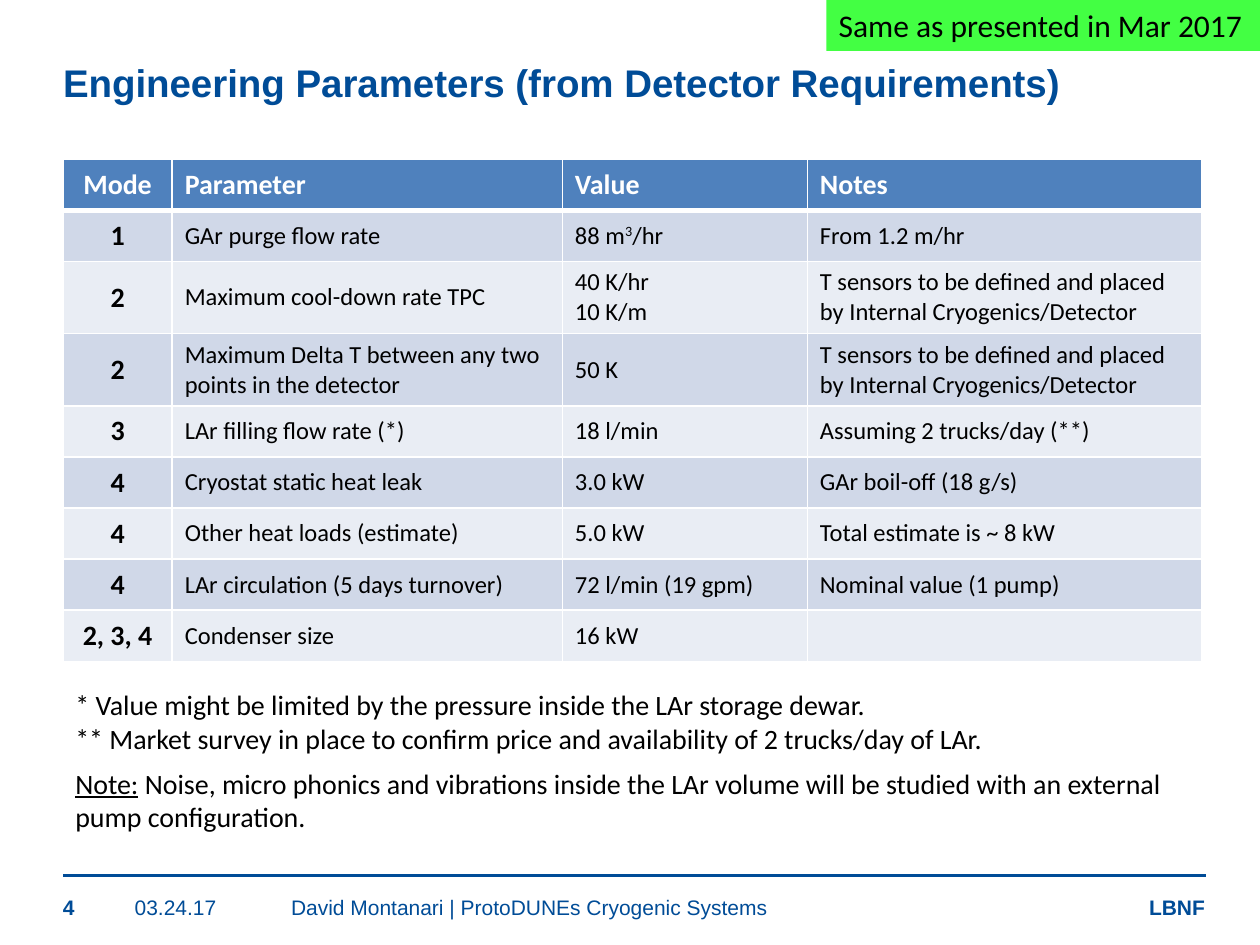
"""Build the ProtoDUNE engineering parameters slide."""
from dataclasses import dataclass
from typing import Any, Optional

from lxml.etree import SubElement
from pptx import Presentation
from pptx.dml.color import RGBColor
from pptx.enum.shapes import MSO_CONNECTOR, MSO_SHAPE
from pptx.enum.text import MSO_ANCHOR, MSO_AUTO_SIZE, PP_ALIGN
from pptx.oxml.ns import qn
from pptx.util import Pt

NAVY = RGBColor(0x00, 0x4C, 0x97)
BLUE = RGBColor(0x4F, 0x81, 0xBD)
BAND_DARK = RGBColor(0xD0, 0xD8, 0xE8)
BAND_LIGHT = RGBColor(0xE9, 0xED, 0xF4)
GREEN = RGBColor(0x43, 0xFF, 0x43)
WHITE = RGBColor(0xFF, 0xFF, 0xFF)
BLACK = RGBColor(0x00, 0x00, 0x00)

TITLE = {"name": "Arial", "size": Pt(22), "bold": True, "color": NAVY}
FOOTER = {"name": "Arial", "size": Pt(12), "bold": False, "color": NAVY}
FOOTER_BOLD = {**FOOTER, "bold": True}
HEADER = {"name": "Calibri", "size": Pt(16), "bold": True, "color": WHITE}
MODE = {**HEADER, "color": BLACK}
BODY = {**MODE, "size": Pt(14), "bold": False}
NOTE = {**BODY, "size": Pt(16)}
BADGE = {**BODY, "size": Pt(18)}
SUPERSCRIPT = {**BODY, "baseline": "30000"}
UNDERLINED = {**NOTE, "underline": True}

Line = list[tuple[str, dict[str, Any]]]


@dataclass
class TextBox:
    left: float
    top: float
    width: float
    height: float
    lines: list[Line]
    inset: Optional[float] = None
    wrap: bool = True


FOOTER_TOP, FOOTER_HEIGHT = 511.2, 14.4
TEXT_BOXES = [
    TextBox(656.6, 510.5, 33.2, 15.1, [[("LBNF", FOOTER_BOLD)]], 0, False),
    TextBox(77, FOOTER_TOP, 89.3, FOOTER_HEIGHT, [[("03.24.17", FOOTER)]], 0),
    TextBox(166.3, FOOTER_TOP, 442, FOOTER_HEIGHT,
            [[("David Montanari | ProtoDUNEs Cryogenic Systems", FOOTER)]], 0),
    TextBox(36, FOOTER_TOP, 41, FOOTER_HEIGHT, [[("4", FOOTER_BOLD)]], 0),
    TextBox(36, 434.2, 648, 46, [[
        ("Note:", UNDERLINED),
        (" Noise, micro phonics and vibrations inside the LAr volume will be "
         "studied with an external pump configuration.", NOTE)]]),
    TextBox(36, 389.5, 535.7, 46, [
        [("* Value might be limited by the pressure inside the LAr storage dewar.", NOTE)],
        [("** Market survey in place to confirm price and availability of "
          "2 trucks/day of LAr.", NOTE)]], wrap=False),
]

SENSORS = "T sensors to be defined and placed by Internal Cryogenics/Detector"
COLUMN_WIDTHS = [62.4, 223, 140, 225.3]
ROW_HEIGHT = 29.2
ROWS = [
    ["Mode", "Parameter", "Value", "Notes"],
    ["1", "GAr purge flow rate", "88 m^3^/hr", "From 1.2 m/hr"],
    ["2", "Maximum cool-down rate TPC", "40 K/hr\n10 K/m", SENSORS],
    ["2", "Maximum Delta T between any two points in the detector", "50 K", SENSORS],
    ["3", "LAr filling flow rate (*)", "18 l/min", "Assuming 2 trucks/day (**)"],
    ["4", "Cryostat static heat leak", "3.0 kW", "GAr boil-off (18 g/s)"],
    ["4", "Other heat loads (estimate)", "5.0 kW", "Total estimate is ~ 8 kW"],
    ["4", "LAr circulation (5 days turnover)", "72 l/min (19 gpm)", "Nominal value (1 pump)"],
    ["2, 3, 4", "Condenser size", "16 kW", ""],
]


def write_lines(frame: Any, lines: list[Line], align: PP_ALIGN = PP_ALIGN.LEFT) -> None:
    """Write formatted lines as the paragraphs of a text frame."""
    for index, line in enumerate(lines):
        para = frame.add_paragraph() if index else frame.paragraphs[0]
        para.alignment = align
        for text, style in line:
            span = para.add_run()
            span.text = text
            for key, value in style.items():
                if key == "color":
                    span.font.color.rgb = value
                elif key == "baseline":
                    span._r.get_or_add_rPr().set(key, value)
                else:
                    setattr(span.font, key, value)


def set_insets(frame: Any, inset: float) -> None:
    """Give a text frame the same inset on all sides."""
    for side in ("left", "top", "right", "bottom"):
        setattr(frame, f"margin_{side}", Pt(inset))


def add_text_box(page: Any, item: TextBox) -> None:
    """Add a text box to the page."""
    box = page.shapes.add_textbox(Pt(item.left), Pt(item.top), Pt(item.width), Pt(item.height))
    frame = box.text_frame
    frame.word_wrap = item.wrap
    if item.inset is not None:
        set_insets(frame, item.inset)
        frame.vertical_anchor = MSO_ANCHOR.BOTTOM
    write_lines(frame, item.lines)


def set_borders(cell: Any, widths: dict[str, float]) -> None:
    """Draw white borders of the given widths around a cell."""
    properties = cell._tc.get_or_add_tcPr()
    for side, width in widths.items():
        border = SubElement(properties, qn(f"a:ln{side}"), w=str(Pt(width)))
        SubElement(SubElement(border, qn("a:solidFill")), qn("a:srgbClr"), val=str(WHITE))


def split_cell(text: str, style: dict[str, Any]) -> list[Line]:
    """Split cell text into lines, with superscripts between carets."""
    return [[(part, SUPERSCRIPT if index % 2 else style)
             for index, part in enumerate(line.split("^"))]
            for line in text.split("\n")]


def add_parameter_table(page: Any) -> None:
    """Add the banded table of parameters."""
    table = page.shapes.add_table(
        len(ROWS), len(COLUMN_WIDTHS), Pt(36), Pt(90.9),
        Pt(sum(COLUMN_WIDTHS)), Pt(ROW_HEIGHT * len(ROWS))).table
    for column, width in zip(table.columns, COLUMN_WIDTHS):
        column.width = Pt(width)
    for row_index, texts in enumerate(ROWS):
        table.rows[row_index].height = Pt(ROW_HEIGHT)
        band = BAND_DARK if row_index % 2 else BAND_LIGHT
        for column_index, text in enumerate(texts):
            cell = table.cell(row_index, column_index)
            set_borders(cell, {"L": 1, "R": 1, "T": 3 if row_index == 1 else 1,
                               "B": 1 if row_index else 3})
            cell.fill.solid()
            cell.fill.fore_color.rgb = band if row_index else BLUE
            cell.vertical_anchor = MSO_ANCHOR.MIDDLE
            if text:
                style = HEADER if row_index == 0 else BODY if column_index else MODE
                align = PP_ALIGN.LEFT if column_index else PP_ALIGN.CENTER
                write_lines(cell.text_frame, split_cell(text, style), align)


def add_title(page: Any) -> None:
    """Place and format the title."""
    title = page.shapes.title
    place = {"left": 36, "top": 33.8, "width": 676, "height": 44.6}
    for key, value in place.items():
        setattr(title, key, Pt(value))
    frame = title.text_frame
    set_insets(frame, 0)
    frame.auto_size = MSO_AUTO_SIZE.NONE
    frame.vertical_anchor = MSO_ANCHOR.TOP
    write_lines(frame, [[("Engineering Parameters (from Detector Requirements)", TITLE)]])


def add_footer_rule(page: Any) -> None:
    """Draw the line above the footer."""
    rule = page.shapes.add_connector(
        MSO_CONNECTOR.STRAIGHT, Pt(36), Pt(500.4), Pt(689), Pt(500.4))
    rule.line.color.rgb = NAVY
    rule.line.width = Pt(2)
    SubElement(rule._element.spPr, qn("a:effectLst"))


def add_badge(page: Any) -> None:
    """Add the green status badge."""
    badge = page.shapes.add_shape(MSO_SHAPE.RECTANGLE, Pt(472.2), Pt(0), Pt(247.8), Pt(29.1))
    badge.shadow.inherit = False
    badge.fill.solid()
    badge.fill.fore_color.rgb = GREEN
    badge.line.fill.background()
    frame = badge.text_frame
    frame.word_wrap = False
    frame.vertical_anchor = MSO_ANCHOR.TOP
    write_lines(frame, [[("Same as presented in Mar 2017", BADGE)]])


def main() -> None:
    """Build and save the deck."""
    deck = Presentation()
    deck.slide_width, deck.slide_height = Pt(720), Pt(540)
    page = deck.slides.add_slide(deck.slide_layouts[5])
    add_title(page)
    add_footer_rule(page)
    add_parameter_table(page)
    for item in TEXT_BOXES:
        add_text_box(page, item)
    add_badge(page)
    deck.save("out.pptx")


if __name__ == "__main__":
    main()
